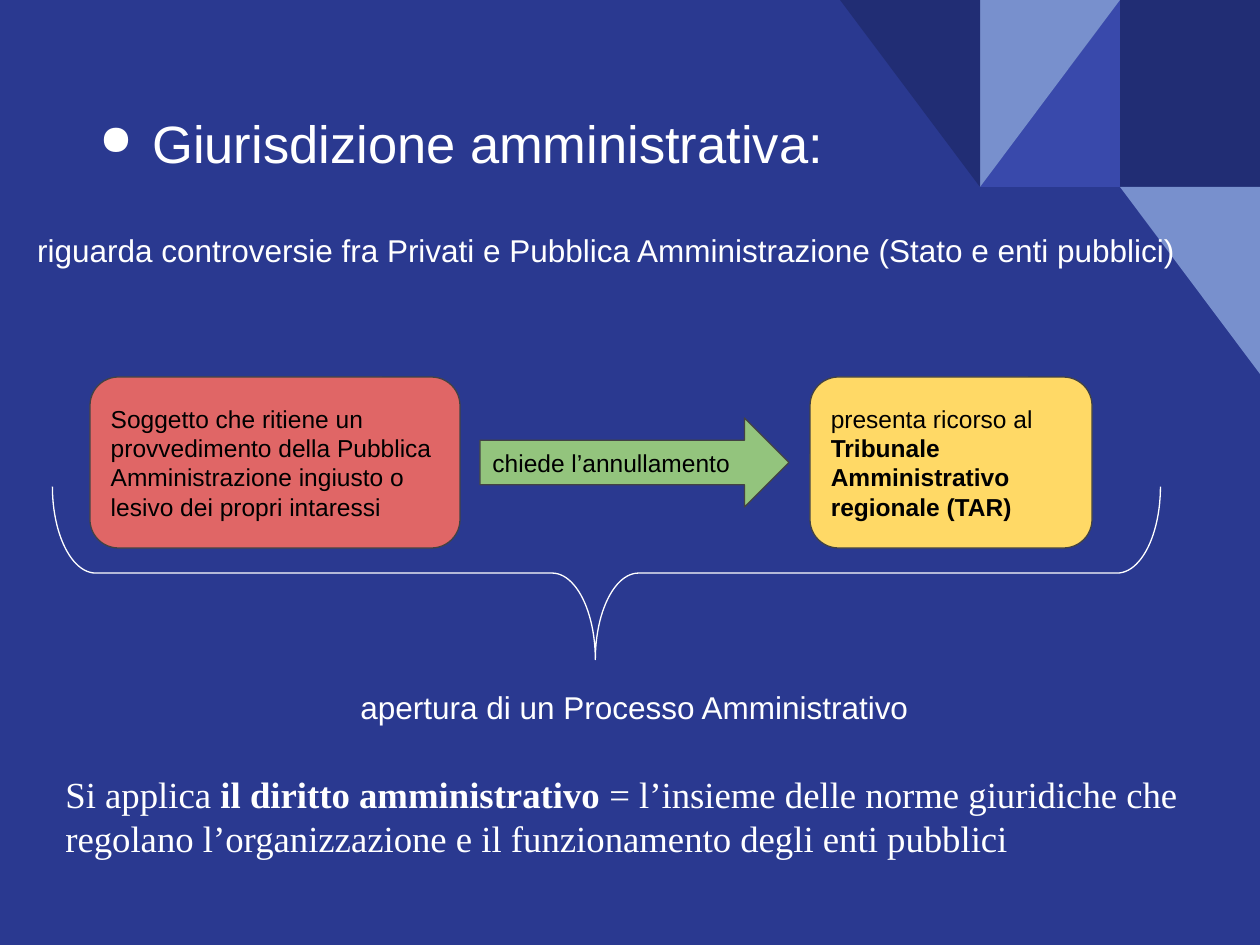
import pptx
import pptx.util
import pptx.dml.color
import pptx.enum.shapes
import pptx.enum.text
import pptx.oxml.ns
from lxml import etree

RGB = pptx.dml.color.RGBColor
MSO = pptx.enum.shapes.MSO_SHAPE
ANCHOR = pptx.enum.text.MSO_ANCHOR
qn = pptx.oxml.ns.qn

PX = 914400 / 126
BLUE = RGB(0x2A, 0x39, 0x90)
NAVY = RGB(0x21, 0x2D, 0x74)
INDIGO = RGB(0x39, 0x49, 0xAB)
SKY = RGB(0x78, 0x90, 0xCD)
RED = RGB(0xE0, 0x66, 0x66)
GREEN = RGB(0x93, 0xC4, 0x7D)
YELLOW = RGB(0xFF, 0xD9, 0x66)
GREY = RGB(0x43, 0x43, 0x43)
WHITE = RGB(0xFF, 0xFF, 0xFF)
BLACK = RGB(0x00, 0x00, 0x00)

prs = pptx.Presentation()
prs.slide_width, prs.slide_height = round(1260 * PX), round(945 * PX)
s = prs.slides.add_slide(prs.slide_layouts[6])
s.background.fill.solid()
s.background.fill.fore_color.rgb = BLUE


def add_shape(kind, box, fill=None, line=None):
    sp = s.shapes.add_shape(kind, *[round(v * PX) for v in box])
    sp.shadow.inherit = False
    if fill is None:
        sp.fill.background()
    else:
        sp.fill.solid()
        sp.fill.fore_color.rgb = fill
    if line is None:
        sp.line.fill.background()
    else:
        sp.line.color.rgb = line
        sp.line.width = pptx.util.Pt(0.75)
    return sp


def add_text(text, box=None, sp=None, size=18, font="Arial", color=WHITE, anchor=ANCHOR.TOP):
    """Write text in a new box or in sp; parts between * are bold."""
    if sp is None:
        sp = s.shapes.add_textbox(*[round(v * PX) for v in box])
    tf = sp.text_frame
    tf.word_wrap = True
    tf.vertical_anchor = anchor
    tf.margin_left = tf.margin_right = tf.margin_top = tf.margin_bottom = pptx.util.Inches(0.1)
    p = tf.paragraphs[0]
    p.alignment = pptx.enum.text.PP_ALIGN.LEFT
    for i, part in enumerate(text.split("*")):
        if part:
            r = p.add_run()
            r.text = part
            r.font.size = pptx.util.Pt(size)
            r.font.name = font
            r.font.color.rgb = color
            r.font.bold = i % 2 == 1
    return p


# Corner pattern: column, row, shape, rotation, flip, fill
for col, row, kind, rot, flip, fill in [
    (2, 0, MSO.RECTANGLE, 0, False, NAVY),
    (1, 0, MSO.RIGHT_TRIANGLE, 0, True, INDIGO),
    (1, 0, MSO.RIGHT_TRIANGLE, 180, True, SKY),
    (0, 0, MSO.RIGHT_TRIANGLE, 180, False, NAVY),
    (2, 1, MSO.RIGHT_TRIANGLE, 180, False, SKY),
]:
    sp = add_shape(kind, (840 + 140 * col, 187 * row, 140, 187), fill)
    sp.rotation = rot
    if flip:
        sp._element.spPr.find(qn("a:xfrm")).set("flipH", "1")

# Title with bullet
p = add_text("Giurisdizione amministrativa:", (77, 33, 1056, 154), size=30, anchor=ANCHOR.BOTTOM)
pPr = p._p.get_or_add_pPr()
pPr.set("marL", str(pptx.util.Inches(0.5)))
pPr.set("indent", str(pptx.util.Inches(-0.42)))
clr = etree.SubElement(pPr, qn("a:buClr"))
etree.SubElement(clr, qn("a:srgbClr")).set("val", str(WHITE))
etree.SubElement(pPr, qn("a:buSzPct")).set("val", "80000")
etree.SubElement(pPr, qn("a:buChar")).set("char", "●")

# Subtitle
add_text(" riguarda controversie fra Privati e Pubblica Amministrazione (Stato e enti pubblici)",
         (16, 218, 1231, 79))

# Steps of the appeal
for kind, box, fill, text in [
    (MSO.ROUNDED_RECTANGLE, (90, 377, 370, 171), RED,
     "Soggetto che ritiene un provvedimento della Pubblica Amministrazione "
     "ingiusto o lesivo dei propri intaressi"),
    (MSO.RIGHT_ARROW, (480, 418, 309, 89), GREEN, "chiede l’annullamento"),
    (MSO.ROUNDED_RECTANGLE, (810, 377, 282, 171), YELLOW,
     "presenta ricorso al *Tribunale Amministrativo regionale (TAR)*"),
]:
    sp = add_shape(kind, box, fill, GREY)
    add_text(text, sp=sp, size=14, color=BLACK, anchor=ANCHOR.MIDDLE)

# Outcome and applicable law
add_text("apertura di un Processo Amministrativo", (348, 675, 678, 67))
add_text("Si applica *il diritto amministrativo* = l’insieme delle norme giuridiche che "
         "regolano l’organizzazione e il funzionamento degli enti pubblici",
         (53, 759, 1194, 144), size=21, font="Times New Roman")

# Brace under the steps
sp = add_shape(MSO.LEFT_BRACE, (520, 19, 173, 1108), line=WHITE)
sp.rotation = 270
sp.adjustments[0], sp.adjustments[1] = 0.25, 0.49

prs.save("out.pptx")
